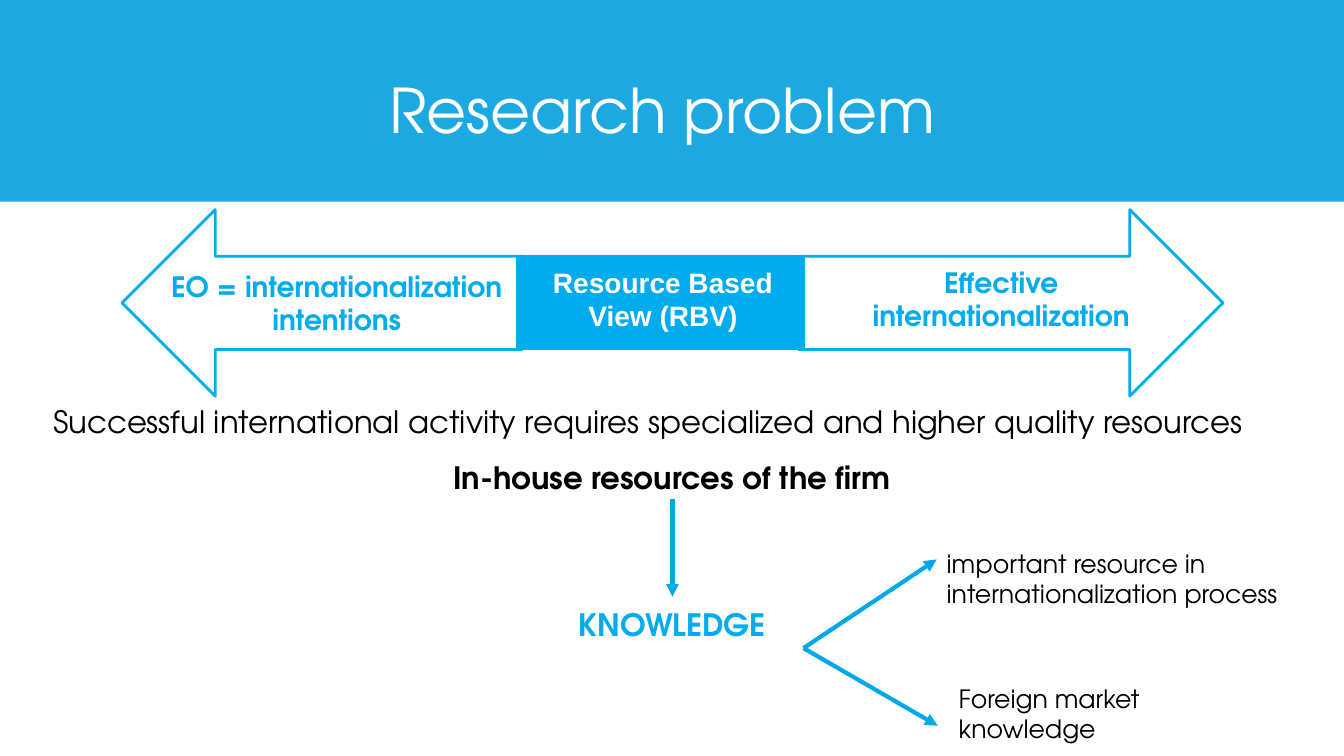
from dataclasses import dataclass

from lxml.etree import SubElement
from pptx import Presentation
from pptx.dml.color import RGBColor
from pptx.enum.shapes import MSO_CONNECTOR as CONNECTOR, MSO_SHAPE as SHAPE
from pptx.enum.text import MSO_ANCHOR as ANCHOR, PP_ALIGN as ALIGN
from pptx.oxml.ns import qn
from pptx.util import Inches, Pt


@dataclass(frozen=True)
class Theme:
    band: RGBColor = RGBColor(0x1C, 0xA9, 0xE1)
    accent: RGBColor = RGBColor(0x00, 0xAC, 0xEE)
    arrow: RGBColor = RGBColor(0x00, 0xA8, 0xE9)
    white: RGBColor = RGBColor(0xFF, 0xFF, 0xFF)
    black: RGBColor = RGBColor(0x00, 0x00, 0x00)
    font: str = "TeX Gyre Adventor"
    box_font: str = "Arial"
    title: int = 44
    body: int = 22
    label: int = 20
    note: int = 18
    outline: int = 2
    connector: int = 3


THEME = Theme()


def place(sp, left, top, width, height):
    sp.left, sp.top = Inches(left), Inches(top)
    sp.width, sp.height = Inches(width), Inches(height)


def write(tf, text, size, color, align=ALIGN.CENTER, bold=False, font=THEME.font):
    tf.word_wrap = True
    tf.vertical_anchor = ANCHOR.MIDDLE
    tf.text = text
    p = tf.paragraphs[0]
    p.alignment = align
    for r in p.runs:
        r.font.size = Pt(size)
        r.font.name = font
        r.font.bold = bold
        r.font.color.rgb = color


def add_title(slide, text):
    title = slide.shapes.title
    place(title, 0.82, 0.4, 11.5, 1.45)
    write(title.text_frame, text, THEME.title, THEME.white)
    title.text_frame.paragraphs[0].line_spacing = 0.9


def add_text(slide, box, text, size, color, **style):
    sp = slide.shapes.add_textbox(*map(Inches, box))
    write(sp.text_frame, text, size, color, **style)


def add_block(slide, kind, box, fill=None, line=None, rotation=0):
    sp = slide.shapes.add_shape(kind, *map(Inches, box))
    sp.shadow.inherit = False
    sp.rotation = rotation
    if fill is None:
        sp.fill.background()
    else:
        sp.fill.solid()
        sp.fill.fore_color.rgb = fill
    if line is None:
        sp.line.fill.background()
    else:
        sp.line.color.rgb = line
        sp.line.width = Pt(THEME.outline)
    return sp


def add_band(slide):
    """Put the header band behind the title."""
    band = add_block(slide, SHAPE.RECTANGLE, (0, 0, 13.33, 2), fill=THEME.band)
    slide.shapes.title._element.addprevious(band._element)


def add_arrow(slide, start, end):
    line = slide.shapes.add_connector(CONNECTOR.STRAIGHT, *map(Inches, start + end))
    line.line.color.rgb = THEME.arrow
    line.line.width = Pt(THEME.connector)
    SubElement(line.line._get_or_add_ln(), qn("a:tailEnd"), type="triangle")
    SubElement(line._element.spPr, qn("a:effectLst"))


def add_double_arrow(slide):
    """Two block arrows pointing outwards from the central RBV box."""
    accent = THEME.accent
    add_block(slide, SHAPE.RIGHT_ARROW, (7.92, 2.08, 4.21, 1.85), line=accent)
    add_block(slide, SHAPE.RIGHT_ARROW, (1.21, 2.08, 3.97, 1.85), line=accent, rotation=180)
    add_block(slide, SHAPE.RECTANGLE, (5.13, 2.54, 2.84, 0.92), fill=accent, line=accent)
    add_text(slide, (7.97, 2.58, 3.92, 0.77), "Effective internationalization",
             THEME.label, accent, bold=True)
    add_text(slide, (1.56, 2.62, 3.56, 0.77), "EO = internationalization intentions",
             THEME.label, accent, bold=True)
    add_text(slide, (5.18, 2.58, 2.79, 0.77), "Resource Based View (RBV)",
             THEME.label, THEME.white, bold=True, font=THEME.box_font)


def add_statements(slide):
    statements = (
        (3.93, "Successful international activity requires specialized "
               "and higher quality resources", THEME.black, ALIGN.LEFT, False),
        (4.48, "In-house resources of the firm", THEME.black, ALIGN.CENTER, True),
        (5.94, "KNOWLEDGE", THEME.accent, ALIGN.CENTER, True),
    )
    for top, text, color, align, bold in statements:
        add_text(slide, (0.43, top, 12.47, 0.5), text, THEME.body, color,
                 align=align, bold=bold)


def add_knowledge_branches(slide):
    fork = (7.97, 6.43)
    branches = (
        ((9.29, 5.55), (9.29, 5.38, 3.71, 0.71),
         "important resource in internationalization process"),
        ((9.3, 7.2), (9.41, 6.72, 2.6, 0.71), "Foreign market knowledge"),
    )
    for tip, box, text in branches:
        add_arrow(slide, fork, tip)
        add_text(slide, box, text, THEME.note, THEME.black, align=ALIGN.LEFT)


def main():
    prs = Presentation()
    prs.slide_width, prs.slide_height = Inches(13.33), Inches(7.5)
    slide = prs.slides.add_slide(prs.slide_layouts[5])
    add_band(slide)
    add_title(slide, "Research problem")
    add_double_arrow(slide)
    add_statements(slide)
    add_arrow(slide, (6.67, 4.95), (6.67, 5.92))
    add_knowledge_branches(slide)
    prs.save("out.pptx")


if __name__ == "__main__":
    main()
